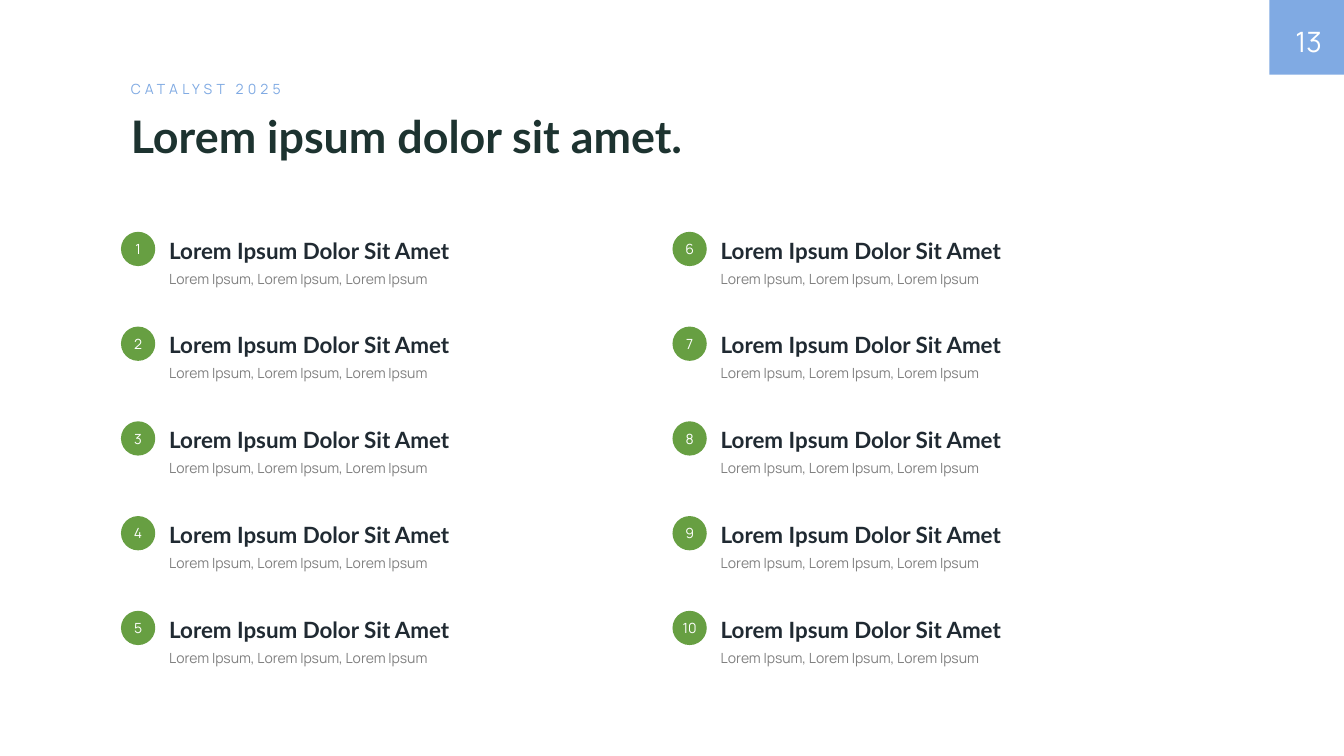
from pptx import Presentation
from pptx.dml.color import RGBColor
from pptx.enum.shapes import MSO_SHAPE
from pptx.enum.text import MSO_ANCHOR, MSO_AUTO_SIZE, PP_ALIGN
from pptx.util import Inches, Pt

BLUE = RGBColor(0x80, 0xAA, 0xE3)
GREEN = RGBColor(0x67, 0x9F, 0x42)
PINE = RGBColor(0x1D, 0x33, 0x30)
INK = RGBColor(0x20, 0x2A, 0x32)
GRAY = RGBColor(0x80, 0x80, 0x80)
WHITE = RGBColor(0xFF, 0xFF, 0xFF)

HEAD = "Lorem Ipsum Dolor Sit Amet"
NOTE = "Lorem Ipsum, Lorem Ipsum, Lorem Ipsum"
ROWS = 5
LEFTS = (1.2, 6.67)
TOP, PITCH = 2.3, 0.94


def write(shape, text, size=10, color=GRAY, font="Manrope", bold=False,
          align=PP_ALIGN.LEFT, middle=False, pad=True, track=0, grow=False):
    frame = shape.text_frame
    frame.word_wrap = True
    frame.vertical_anchor = MSO_ANCHOR.MIDDLE if middle else MSO_ANCHOR.TOP
    if grow:
        frame.auto_size = MSO_AUTO_SIZE.SHAPE_TO_FIT_TEXT
    if not pad:
        frame.margin_left = frame.margin_right = 0
        frame.margin_top = frame.margin_bottom = 0
    para = frame.paragraphs[0]
    para.alignment = align
    run = para.add_run()
    run.text = text
    run.font.size = Pt(size)
    run.font.name = font
    run.font.bold = bold
    run.font.color.rgb = color
    if track:
        run.font._element.set("spc", str(track * 100))


def add_text(shapes, x, y, w, h, text, **style):
    box = shapes.add_textbox(Inches(x), Inches(y), Inches(w), Inches(h))
    write(box, text, **style)


def add_solid(shapes, kind, x, y, w, h, fill):
    shape = shapes.add_shape(kind, Inches(x), Inches(y), Inches(w), Inches(h))
    shape.shadow.inherit = False
    shape.fill.solid()
    shape.fill.fore_color.rgb = fill
    shape.line.fill.background()
    return shape


def add_item(slide, x, y, number):
    shapes = slide.shapes.add_group_shape().shapes
    add_text(shapes, x + 0.38, y + 0.33, 3.78, 0.27, NOTE, grow=True)
    add_text(shapes, x + 0.38, y, 3.78, 0.37, HEAD, size=16, color=INK,
             font="Lato", bold=True, grow=True)
    badge = add_solid(shapes, MSO_SHAPE.OVAL, x, y, 0.34, 0.34, GREEN)
    write(badge, str(number), color=WHITE, align=PP_ALIGN.CENTER,
          middle=True, pad=False)


def main():
    deck = Presentation()
    deck.slide_width, deck.slide_height = Inches(13.33), Inches(7.5)
    slide = deck.slides.add_slide(deck.slide_layouts[6])
    shapes = slide.shapes

    # Page number
    add_solid(shapes, MSO_SHAPE.RECTANGLE, 12.59, -0.01, 0.75, 0.75, BLUE)
    add_text(shapes, 12.56, 0.06, 0.55, 0.69, "13", size=20, color=WHITE,
             align=PP_ALIGN.RIGHT, middle=True, pad=False)

    # Heading
    add_text(shapes, 1.2, 0.75, 4.17, 0.27, "CATALYST 2025", color=BLUE,
             track=3)
    add_text(shapes, 1.2, 1.03, 9.64, 0.57, "Lorem ipsum dolor sit amet.",
             size=32, color=PINE, font="Lato", bold=True)

    # Numbered items, filled column by column
    for col, left in enumerate(LEFTS):
        for row in range(ROWS):
            add_item(slide, left, TOP + row * PITCH, col * ROWS + row + 1)

    deck.save("out.pptx")


if __name__ == "__main__":
    main()
